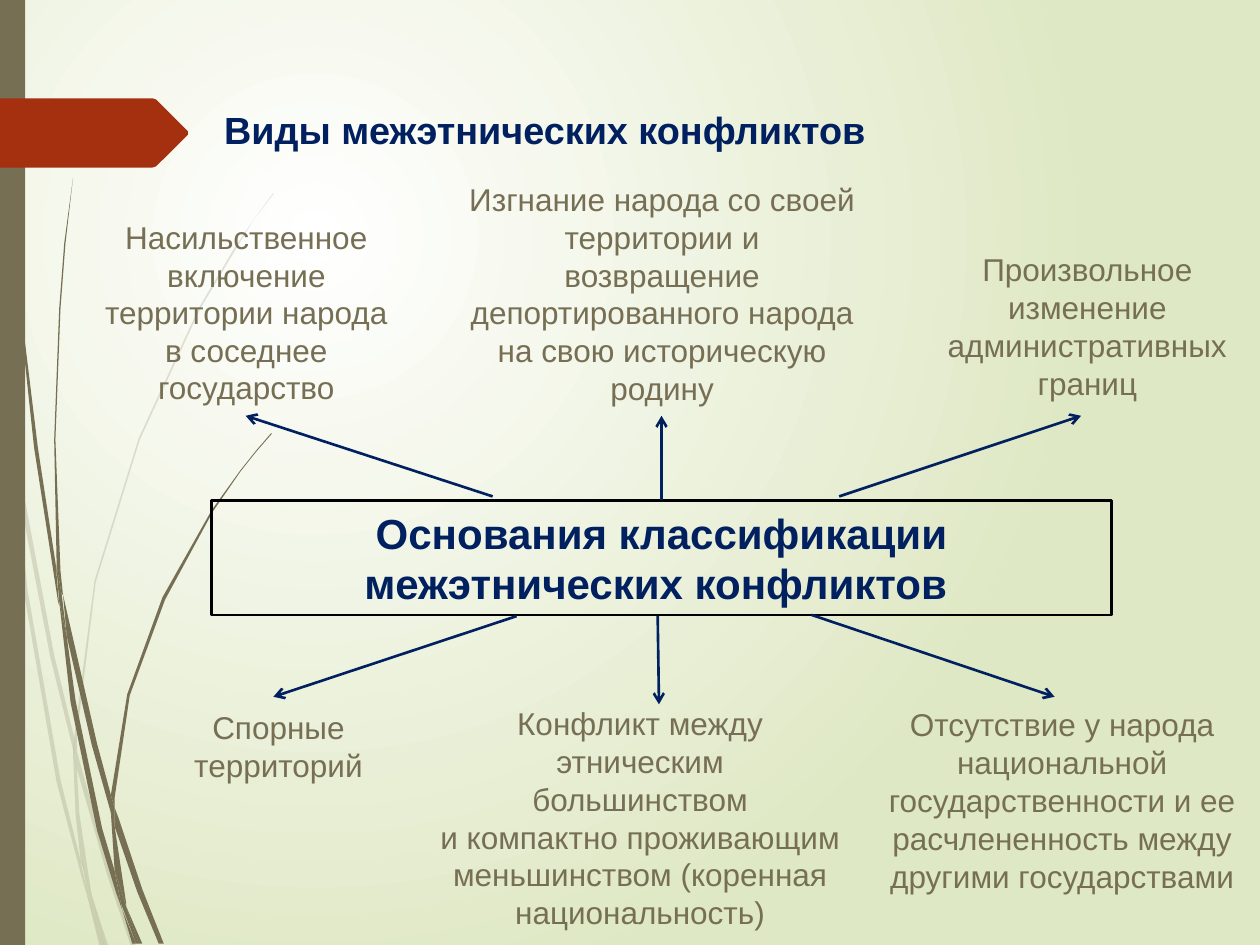
from lxml.etree import SubElement
from pptx import Presentation
from pptx.dml.color import RGBColor
from pptx.enum.shapes import MSO_CONNECTOR, MSO_SHAPE
from pptx.enum.text import MSO_ANCHOR, PP_ALIGN
from pptx.oxml.ns import qn
from pptx.util import Emu, Pt

PX = 9144  # 100 px to the inch
OLIVE, NAVY, RED, BLACK = "766F54", "002060", "A53010", "000000"


def px(n):
    return Emu(n * PX)


def rgb(value):
    return RGBColor.from_string(value)


def write(tf, text, size=18, color=OLIVE, bold=False, align=PP_ALIGN.CENTER,
          anchor=MSO_ANCHOR.TOP, tight_last=False):
    """Each item of text is a paragraph; a line feed inside it breaks the line."""
    tf.word_wrap = True
    tf.vertical_anchor = anchor
    for i, line in enumerate(text):
        p = tf.add_paragraph() if i else tf.paragraphs[0]
        p.text = line
        p.alignment = align
        if i:
            p.space_before = Pt(size * 0.2)
        for r in p.runs:
            r.font.name, r.font.size, r.font.bold = "Arial", Pt(size), bold
            r.font.color.rgb = rgb(color)
    if tight_last:
        p.line_spacing = 0.8


class Deck:
    def __init__(self):
        self.prs = Presentation()
        self.prs.slide_width, self.prs.slide_height = px(1000), px(750)
        self.s = self.prs.slides.add_slide(self.prs.slide_layouts[6])

    def background(self, inner, outer):
        fill = self.s.background.fill
        fill.gradient()
        for stop, color, pos in zip(fill.gradient_stops, (inner, outer), (0, 1)):
            stop.color.rgb, stop.position = rgb(color), pos
        grad = self.s.element.find(".//" + qn("a:gradFill"))
        grad.remove(grad.find(qn("a:lin")))
        path = SubElement(grad, qn("a:path"), path="circle")
        SubElement(path, qn("a:fillToRect"),
                   l="50000", t="50000", r="100000", b="100000")

    def paint(self, sp, fill=None, line=None, alpha=None):
        sp.shadow.inherit = False
        if fill:
            sp.fill.solid()
            sp.fill.fore_color.rgb = rgb(fill)
        else:
            sp.fill.background()
        if line:
            sp.line.color.rgb, sp.line.width = rgb(line), Pt(1.5)
        else:
            sp.line.fill.background()
        if alpha:
            color = sp.element.spPr.find(".//" + qn("a:srgbClr"))
            SubElement(color, qn("a:alpha"), val=str(alpha * 1000))

    def polygon(self, points, fill, alpha=None):
        start, *rest = [(px(x), px(y)) for x, y in points]
        builder = self.s.shapes.build_freeform(*start)
        builder.add_line_segments(rest, close=True)
        self.paint(builder.convert_to_shape(), fill, alpha=alpha)

    def rect(self, *box, **style):
        sp = self.s.shapes.add_shape(MSO_SHAPE.RECTANGLE, *map(px, box))
        self.paint(sp, **style)
        return sp

    def text(self, box, *text, **style):
        write(self.s.shapes.add_textbox(*map(px, box)).text_frame, text, **style)

    def arrow(self, x1, y1, x2, y2):
        cn = self.s.shapes.add_connector(MSO_CONNECTOR.STRAIGHT,
                                         *map(px, (x1, y1, x2, y2)))
        cn.line.color.rgb, cn.line.width = rgb(NAVY), Pt(1.5)
        SubElement(cn.element.spPr.find(qn("a:ln")), qn("a:tailEnd"), type="arrow")
        SubElement(cn.element.spPr, qn("a:effectLst"))
        return cn


# Grass blades: the outline of each piece
PALE_BLADES = [
    [(8, 350), (6, 322), (0, 282), (0, 299), (7, 344)],
    [(10, 345), (43, 520), (59, 586), (59, 599), (40, 522), (12, 376)],
    [(61, 596), (64, 607), (88, 692), (108, 751), (104, 751), (85, 694), (61, 610)],
    [(83, 751), (86, 751), (73, 711)],
    [(8, 350), (12, 376), (22, 469), (48, 619), (64, 683), (69, 707), (70, 714),
     (64, 693), (45, 621), (19, 470)],
    [(58, 599), (60, 646), (64, 683), (67, 692), (73, 711), (72, 706), (63, 646),
     (61, 610), (61, 608)],
    [(61, 596), (61, 584), (76, 462), (111, 349), (159, 245), (187, 198),
     (201, 175), (217, 154), (217, 153), (201, 175), (186, 197), (158, 244),
     (110, 348), (75, 461), (59, 584), (59, 586)],
    [(70, 714), (79, 751), (82, 751)],
    [(61, 608), (61, 596), (59, 586), (58, 599)],
    [(65, 683), (69, 707), (70, 714), (82, 751), (83, 751), (73, 711), (67, 692)],
]
DARK_BLADES = [
    [(2, 0), (3, 48), (5, 110), (14, 233), (27, 355), (46, 477), (47, 481),
     (45, 457), (45, 453), (30, 355), (15, 232), (6, 109), (4, 48), (3, 0)],
    [(50, 472), (77, 590), (88, 631), (88, 645), (73, 592), (53, 505)],
    [(91, 641), (94, 649), (113, 706), (130, 749), (126, 749), (109, 708), (91, 656)],
    [(47, 477), (53, 505), (60, 556), (81, 657), (91, 691), (96, 717), (97, 722),
     (92, 708), (77, 659), (56, 557)],
    [(50, 472), (48, 453), (44, 349), (48, 245), (52, 193), (58, 141),
     (51, 193), (47, 245), (43, 349), (45, 449), (49, 472)],
    [(100, 719), (113, 749), (110, 749)],
    [(45, 449), (49, 472), (53, 505), (47, 477), (45, 453)],
    [(91, 641), (91, 633), (103, 552), (131, 476), (169, 406), (191, 374),
     (203, 359), (216, 344), (215, 344), (203, 358), (191, 373), (168, 405),
     (129, 474), (101, 551), (88, 631)],
    [(97, 722), (108, 749), (105, 749)],
    [(88, 645), (91, 691), (96, 706), (100, 719), (100, 716), (91, 656), (90, 651)],
    [(88, 645), (91, 656), (91, 641), (88, 631)],
    [(91, 691), (96, 717), (108, 749), (110, 749), (100, 719), (96, 706)],
]


def main():
    deck = Deck()

    # Backdrop
    deck.background("FFFFFF", "DFE8C4")
    for blades, alpha in ((PALE_BLADES, 20), (DARK_BLADES, None)):
        for outline in blades:
            deck.polygon(outline, OLIVE, alpha)
    deck.rect(0, 0, 20, 750, fill=OLIVE)
    deck.polygon([(0, 78), (121, 78), (124, 79), (149, 104), (149, 107),
                  (124, 132), (121, 133), (0, 133)], RED)

    # Title
    deck.text((168, 80, 539, 46), "Виды межэтнических конфликтов", size=21.6,
              color=NAVY, bold=True, align=PP_ALIGN.LEFT, anchor=MSO_ANCHOR.MIDDLE)

    # Kinds of conflict, below and above the centre
    deck.text((686, 555, 314, 163), "Отсутствие у народа национальной "
              "государственности и ее расчлененность между другими государствами")
    deck.text((144, 557, 154, 71), "Спорные территорий")
    deck.text((359, 138, 333, 192), "Изгнание народа со своей территории и возвращение "
              "депортированного народа на свою историческую родину")
    deck.text((726, 193, 274, 131), "Произвольное изменение административных границ",
              anchor=MSO_ANCHOR.MIDDLE)
    deck.text((54, 168, 283, 162), "Насильственное включение территории народа\nв соседнее",
              "государство", tight_last=True)
    deck.text((337, 554, 342, 192), "Конфликт между этническим\nбольшинством\n"
              "и компактно проживающим меньшинством (коренная национальность)")

    # Central box
    center = deck.rect(168, 397, 714, 91, line=BLACK)
    write(center.text_frame, ["Основания классификации межэтнических конфликтов "],
          size=24, color=NAVY, bold=True, anchor=MSO_ANCHOR.MIDDLE)

    # Arrows from the central box
    deck.arrow(525, 397, 525, 330).begin_connect(center, 0)
    for ends in ((666, 394, 858, 330), (391, 394, 195, 330), (522, 489, 523, 559),
                 (644, 488, 837, 553), (410, 489, 217, 553)):
        deck.arrow(*ends)

    deck.prs.save("out.pptx")


if __name__ == "__main__":
    main()
